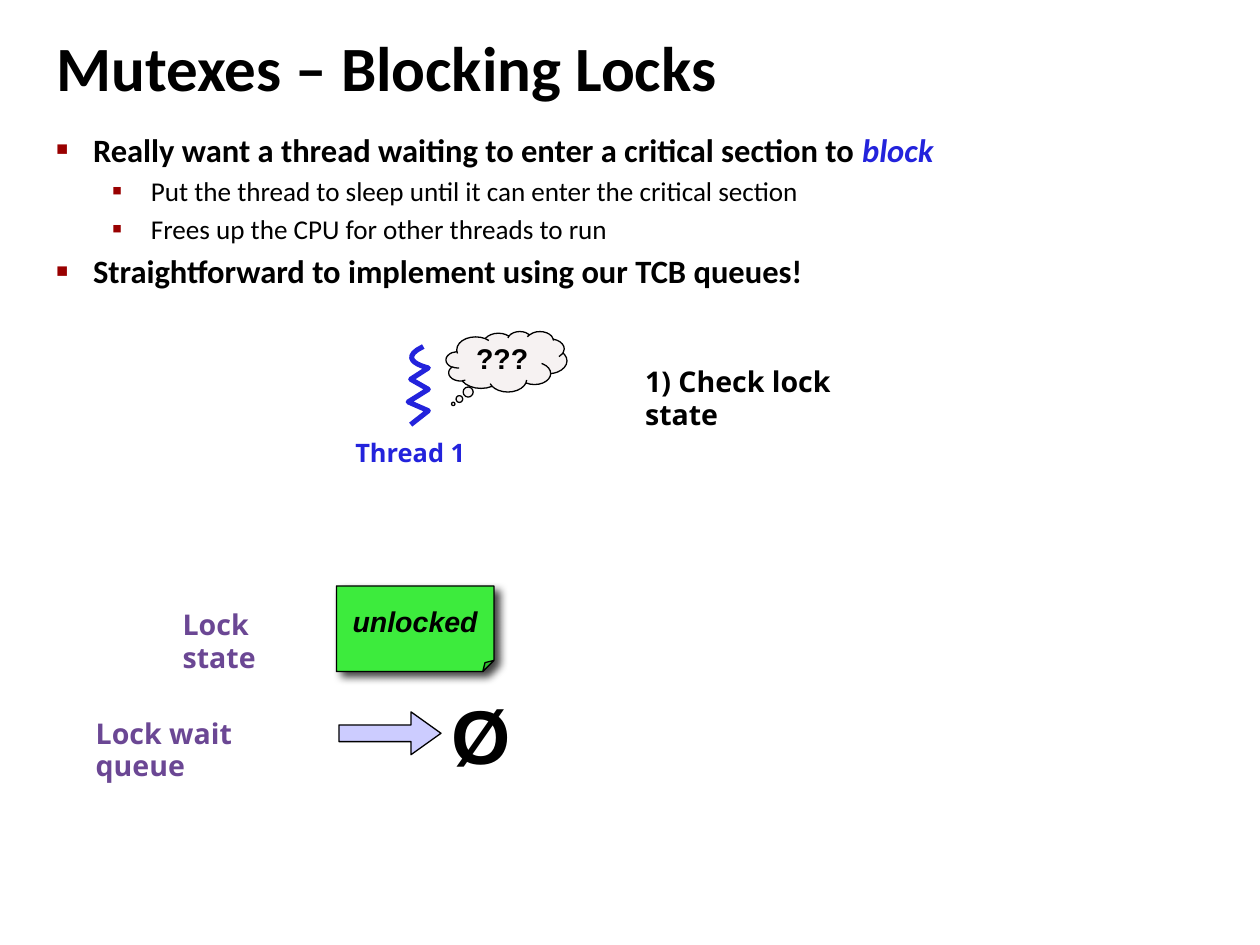
from lxml import etree
from pptx import Presentation
from pptx.dml.color import RGBColor
from pptx.enum import shapes, text
from pptx.oxml import ns
from pptx.util import Inches, Pt

BLACK, BLUE, PURPLE, RED = "000000", "2323DC", "6B4794", "990000"


def color(target, value):
    if hasattr(target, "solid"):
        target.solid()
        target = target.fore_color
    target.rgb = RGBColor.from_string(value)


def style(paragraph, size, face, value, bold=True, italic=False):
    for run in paragraph.runs:
        run.font.size = Pt(size)
        run.font.name = face
        run.font.bold = bold
        run.font.italic = italic
        color(run.font.color, value)


deck = Presentation()
deck.slide_width, deck.slide_height = Inches(10), Inches(7.5)
slide = deck.slides.add_slide(deck.slide_layouts[6])

title = slide.shapes.add_textbox(Inches(0.35), Inches(0.14), Inches(8.3), Inches(0.83)).text_frame
title.word_wrap = True
title.vertical_anchor = text.MSO_ANCHOR.MIDDLE
title.text = "Mutexes – Blocking Locks"
title.paragraphs[0].line_spacing = 0.95
style(title.paragraphs[0], 36, "Calibri", BLACK)

points = [
    (0, "Really want a thread waiting to enter a critical section to "),
    (1, "Put the thread to sleep until it can enter the critical section"),
    (1, "Frees up the CPU for other threads to run"),
    (0, "Straightforward to implement using our TCB queues!"),
]
levels = [
    (18.6, True, 0.29, -0.38, "■", 60),
    (15.5, False, 0.75, -0.31, "▪", 110),
]
body = slide.shapes.add_textbox(Inches(0.35), Inches(0.98), Inches(8.64), Inches(1.45)).text_frame
body.word_wrap = True
body.text = "\n".join(words for level, words in points)
for paragraph, (level, words) in zip(body.paragraphs, points):
    size, bold, margin, indent, bullet, percent = levels[level]
    paragraph.level = level
    paragraph.space_before = Pt(size * 0.2)
    style(paragraph, size, "Calibri", BLACK, bold)
    props = paragraph._p.get_or_add_pPr()
    props.set("marL", str(Inches(margin)))
    props.set("indent", str(Inches(indent)))
    bullet_color = etree.SubElement(props, ns.qn("a:buClr"))
    etree.SubElement(bullet_color, ns.qn("a:srgbClr"), val=RED)
    etree.SubElement(props, ns.qn("a:buSzPct"), val=str(percent * 1000))
    etree.SubElement(props, ns.qn("a:buFont"), typeface="Arial")
    etree.SubElement(props, ns.qn("a:buChar"), char=bullet)
block = body.paragraphs[0].add_run()
block.text = "block"
block.font.size, block.font.name = Pt(18.6), "Calibri"
block.font.bold = block.font.italic = True
color(block.font.color, BLUE)

start, pull, bend = (3.36, 2.75), (3.13, 2.86), (3.4, 2.92)
steps = [i / 12 for i in range(1, 13)]
curl = [
    tuple((1 - t) ** 3 * a + 3 * (1 - t) ** 2 * t * b + (3 * (1 - t) * t ** 2 + t ** 3) * c
          for a, b, c in zip(start, pull, bend))
    for t in steps
]
zigzag = [(3.26, 3.01), (3.4, 3.09), (3.24, 3.19), (3.4, 3.26), (3.26, 3.37)]
builder = slide.shapes.build_freeform(Inches(start[0]), Inches(start[1]))
builder.add_line_segments([(Inches(x), Inches(y)) for x, y in curl + zigzag], close=False)
thread = builder.convert_to_shape()
thread.shadow.inherit = False
thread.fill.background()
thread.line.width = Pt(2.89)
color(thread.line.fill, BLUE)

labels = [
    ("Lock wait queue", 0.76, 5.7, 1.63, 0.26, 16.3, "Open Sans", PURPLE),
    ("Lock state", 1.45, 4.84, 1.03, 0.26, 16.3, "Open Sans", PURPLE),
    ("Thread 1", 2.82, 3.49, 0.97, 0.47, 14.5, "Open Sans", BLUE),
    ("Ø", 3.58, 5.52, 0.47, 0.68, 43.5, "Arial", BLACK),
    ("1) Check lock state", 5.12, 2.91, 1.93, 0.26, 16.3, "Open Sans", BLACK),
]
for words, left, top, width, height, size, face, value in labels:
    label = slide.shapes.add_textbox(
        Inches(left), Inches(top), Inches(width), Inches(height)).text_frame
    label.margin_left = label.margin_right = label.margin_top = label.margin_bottom = 0
    label.word_wrap = False
    label.text = words
    label.paragraphs[0].line_spacing = 0.95
    style(label.paragraphs[0], size, face, value)

kinds = shapes.MSO_SHAPE
figures = [
    (kinds.FOLDED_CORNER, 2.67, 4.65, 1.25, 0.68, {"adj": 0.13}, "3DEB3D", "unlocked", True),
    (kinds.RIGHT_ARROW, 2.69, 5.65, 0.81, 0.34, {"adj1": 0.39, "adj2": 0.7}, "CCCCFF", "", False),
    (kinds.CLOUD_CALLOUT, 3.54, 2.63, 0.96, 0.48, {"adj1": -0.44, "adj2": 0.7}, "F6F2F2", "???", False),
]
for kind, left, top, width, height, adjustments, fill, words, italic in figures:
    figure = slide.shapes.add_shape(kind, Inches(left), Inches(top), Inches(width), Inches(height))
    guides = figure._element.spPr.find(ns.qn("a:prstGeom")).find(ns.qn("a:avLst"))
    guides.clear()
    for guide, ratio in adjustments.items():
        etree.SubElement(guides, ns.qn("a:gd"), name=guide, fmla=f"val {round(ratio * 100000)}")
    figure.shadow.inherit = False
    color(figure.fill, fill)
    color(figure.line.fill, BLACK)
    figure.line.width = Pt(0.75)
    if kind == kinds.FOLDED_CORNER:
        effects = figure._element.spPr.find(ns.qn("a:effectLst"))
        shadow = etree.SubElement(effects, ns.qn("a:outerShdw"), blurRad=str(Pt(5)),
                                  dist=str(Pt(4.1)), dir=str(45 * 60000), rotWithShape="0")
        shade = etree.SubElement(shadow, ns.qn("a:srgbClr"), val=BLACK)
        etree.SubElement(shade, ns.qn("a:alpha"), val="75000")
    if words:
        frame = figure.text_frame
        frame.margin_left = frame.margin_right = frame.margin_top = frame.margin_bottom = 0
        frame.word_wrap = False
        frame.vertical_anchor = text.MSO_ANCHOR.MIDDLE
        frame.text = words
        frame.paragraphs[0].alignment = text.PP_ALIGN.CENTER
        frame.paragraphs[0].line_spacing = 0.95
        style(frame.paragraphs[0], 16.3, "Arial", BLACK, italic=italic)

deck.save("out.pptx")
